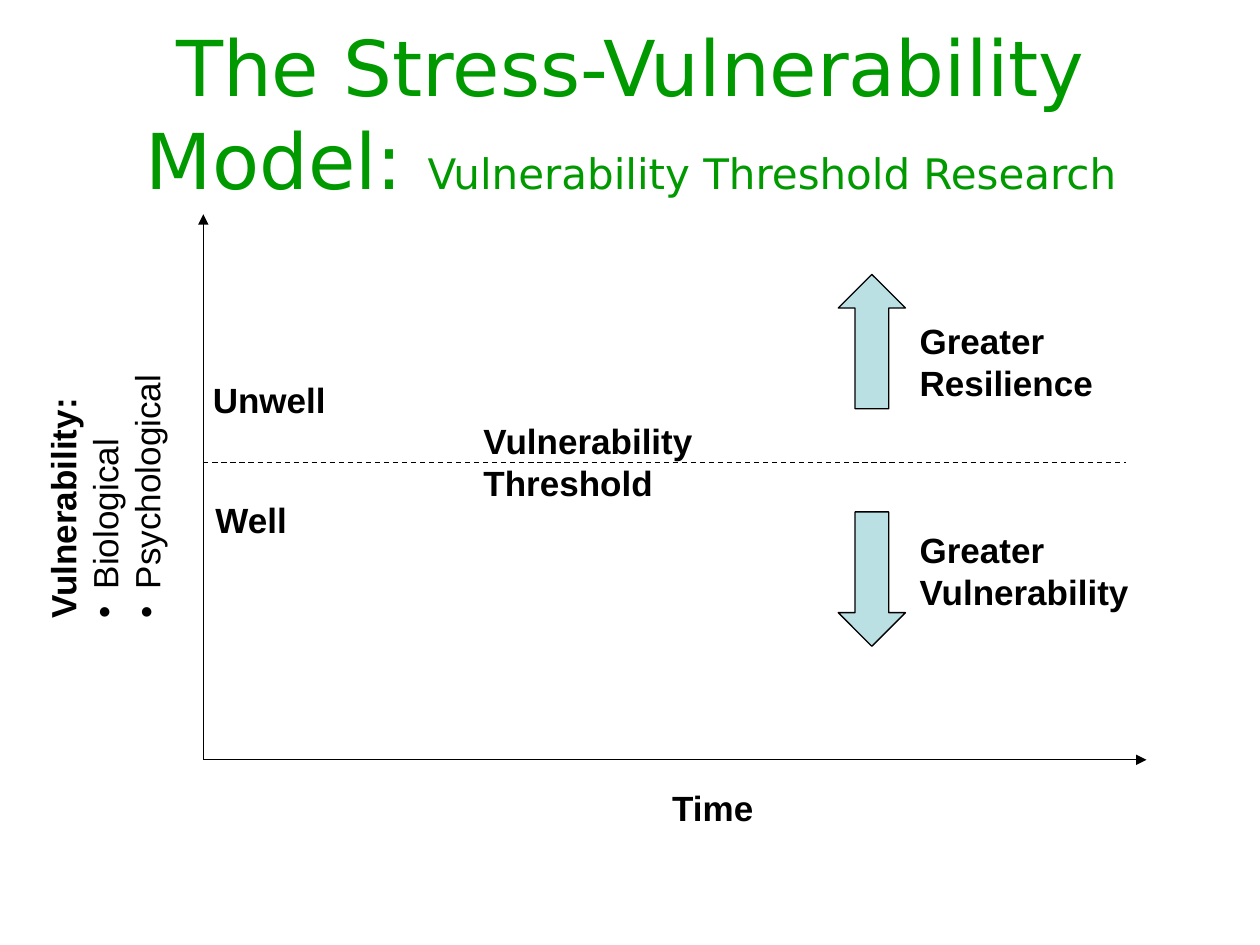
from lxml import etree
from pptx import Presentation
from pptx.dml.color import RGBColor
from pptx.enum.dml import MSO_LINE
from pptx.enum.shapes import MSO_CONNECTOR, MSO_SHAPE
from pptx.enum.text import MSO_ANCHOR, MSO_AUTO_SIZE, PP_ALIGN
from pptx.oxml.ns import qn
from pptx.util import Pt

STRAIGHT = MSO_CONNECTOR.STRAIGHT
UP, DOWN = MSO_SHAPE.UP_ARROW, MSO_SHAPE.DOWN_ARROW
DASH = MSO_LINE.DASH
MIDDLE = MSO_ANCHOR.MIDDLE
GROW = MSO_AUTO_SIZE.SHAPE_TO_FIT_TEXT
CENTER = PP_ALIGN.CENTER
BLACK, GREEN, PALE_BLUE = "000000", "009900", "BBE0E3"


def rgb(value):
    return RGBColor.from_string(value)


def style(r, size, bold=True, font="Arial", color=BLACK):
    r.font.name = font
    r.font.size = Pt(size)
    r.font.bold = bold
    r.font.color.rgb = rgb(color)


prs = Presentation()
prs.slide_width, prs.slide_height = Pt(720), Pt(540)
s = prs.slides.add_slide(prs.slide_layouts[6])

# Title
tf = s.shapes.add_textbox(Pt(36.7), Pt(25.9), Pt(648), Pt(76.3)).text_frame
tf.word_wrap = True
tf.vertical_anchor = MIDDLE
p = tf.paragraphs[0]
p.alignment = CENTER
for text, size in [("The Stress-Vulnerability Model: ", 44),
                   ("Vulnerability Threshold Research", 24)]:
    r = p.add_run()
    r.text = text
    style(r, size, False, "DejaVu Sans", GREEN)

# Axes and threshold
left, bottom, threshold = 116.2, 434.2, 264.2
for x, y, end_x, end_y, is_axis in [
    (left, bottom, left, 122.4, True),
    (left, bottom, 655.2, bottom, True),
    (left, threshold, 643.7, threshold, False),
]:
    line = s.shapes.add_connector(STRAIGHT, Pt(x), Pt(y), Pt(end_x), Pt(end_y))
    line.line.color.rgb = rgb(BLACK)
    line.line.width = Pt(0.75)
    if is_axis:
        ln = line.line._get_or_add_ln()
        etree.SubElement(ln, qn("a:tailEnd"), type="triangle")
    else:
        line.line.dash_style = DASH
    etree.SubElement(line._element.spPr, qn("a:effectLst"))

# Vertical axis label
sp = s.shapes.add_textbox(Pt(-17.3), Pt(244.1), Pt(154.1), Pt(79.2))
sp.rotation = 270
tf = sp.text_frame
tf.word_wrap = True
tf.text = "Vulnerability:\nBiological\nPsychological"
for i, p in enumerate(tf.paragraphs):
    if i:
        pPr = p._p.get_or_add_pPr()
        pPr.set("marL", str(Pt(17)))
        pPr.set("indent", str(-Pt(17)))
        etree.SubElement(pPr, qn("a:buFont"), typeface="Arial")
        etree.SubElement(pPr, qn("a:buChar"), char="•")
    style(p.runs[0], 20, bold=i == 0)

# Direction arrows
for kind, top in [(UP, 156.8), (DOWN, 292.5)]:
    sp = s.shapes.add_shape(kind, Pt(479), Pt(top), Pt(38.4), Pt(76.8))
    sp.shadow.inherit = False
    sp.adjustments[0] = sp.adjustments[1] = 0.5
    sp.fill.solid()
    sp.fill.fore_color.rgb = rgb(PALE_BLUE)
    sp.line.color.rgb = rgb(BLACK)
    sp.line.width = Pt(0.75)

# Labels
for text, x, y, width, height in [
    ("Time", 377, 445.7, 61, 31),
    ("Well", 116, 281.3, 55.5, 31),
    ("Unwell", 114.5, 212.9, 79, 31),
    ("Greater\nResilience", 518.4, 179.3, 116, 55.4),
    ("Greater\nVulnerability", 518.4, 298.4, 136, 55.4),
    ("Vulnerability\nThreshold", 269.2, 236.2, 136, 55.4),
]:
    tf = s.shapes.add_textbox(Pt(x), Pt(y), Pt(width), Pt(height)).text_frame
    tf.word_wrap = False
    tf.auto_size = GROW
    tf.text = text
    for p in tf.paragraphs:
        style(p.runs[0], 20)

prs.save("out.pptx")
